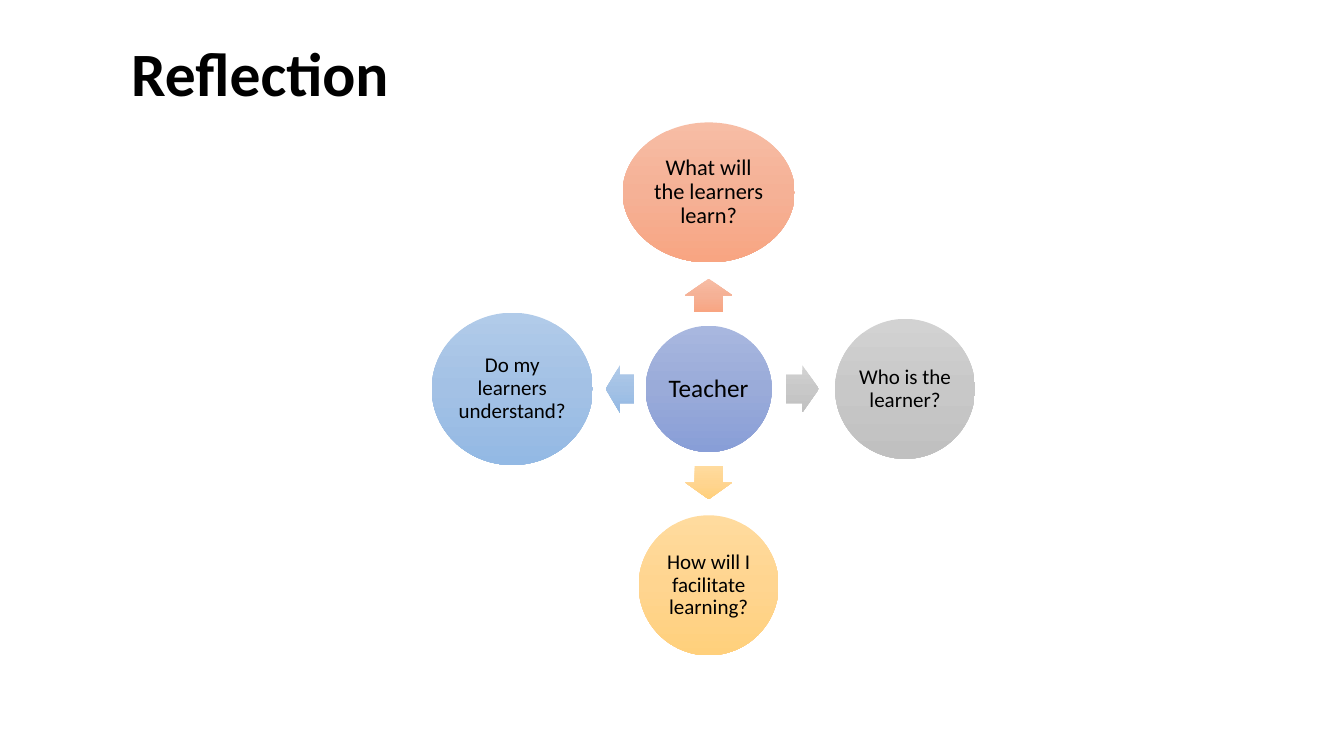
from copy import deepcopy
from math import cos, radians, sin

from pptx import Presentation
from pptx.dml.color import RGBColor
from pptx.enum.shapes import MSO_SHAPE as SHAPE
from pptx.enum.text import MSO_ANCHOR as ANCHOR, MSO_AUTO_SIZE as AUTOSIZE, PP_ALIGN as ALIGN
from pptx.oxml.ns import qn
from pptx.util import Cm, Pt

BLACK = RGBColor(0x00, 0x00, 0x00)
WHITE = RGBColor(0xFF, 0xFF, 0xFF)
INDIGO = RGBColor(0xA8, 0xB7, 0xDF), RGBColor(0x9A, 0xAB, 0xD9), RGBColor(0x88, 0x9E, 0xD7)
ORANGE = RGBColor(0xF7, 0xBD, 0xA5), RGBColor(0xF5, 0xB1, 0x96), RGBColor(0xF8, 0xA5, 0x82)
GREY = RGBColor(0xD2, 0xD2, 0xD2), RGBColor(0xC8, 0xC8, 0xC8), RGBColor(0xC0, 0xC0, 0xC0)
GOLD = RGBColor(0xFF, 0xDB, 0x9E), RGBColor(0xFF, 0xD5, 0x90), RGBColor(0xFF, 0xD0, 0x7C)
BLUE = RGBColor(0xB1, 0xCB, 0xE9), RGBColor(0xA3, 0xC1, 0xE5), RGBColor(0x93, 0xB9, 0xE4)

HUB_X, HUB_Y = 17.86, 9.8
CIRCLE_REACH = 4.95
ARROW_HEIGHT = 1.19

QUESTIONS = [
    ("What will the learners learn?", 270, 4.34, 3.53, 16, ORANGE, 0.84, 2.36),
    ("Who is the learner?", 0, 3.53, 3.53, 15, GREY, 0.84, 2.36),
    ("How will I facilitate learning?", 90, 3.53, 3.53, 15, GOLD, 0.84, 2.36),
    ("Do my learners understand?", 180, 4.06, 3.84, 15, BLUE, 0.71, 2.24),
]


class Deck:
    font = "Calibri"

    def __init__(self):
        self.prs = Presentation()
        self.prs.slide_width, self.prs.slide_height = Cm(33.87), Cm(19.05)
        self.slide = self.prs.slides.add_slide(self.prs.slide_layouts[5])
        background = self.slide.background.fill
        background.solid()
        background.fore_color.rgb = WHITE

    def add_text(self, tf, text, size, align, bold=False):
        tf.word_wrap = True
        tf.auto_size = AUTOSIZE.NONE
        tf.vertical_anchor = ANCHOR.MIDDLE
        p = tf.paragraphs[0]
        p.alignment = align
        p.line_spacing = 0.9
        r = p.add_run()
        r.text = text
        r.font.name, r.font.size, r.font.bold = self.font, Pt(size), bold
        r.font.color.rgb = BLACK

    def title(self, text):
        sp = self.slide.shapes.title
        sp.left, sp.top, sp.width, sp.height = Cm(3.05), Cm(0.79), Cm(27.94), Cm(2.29)
        self.add_text(sp.text_frame, text, 44, ALIGN.LEFT, True)

    def shape(self, kind, x, y, width, height, shades):
        sp = self.slide.shapes.add_shape(
            kind, Cm(x - width / 2), Cm(y - height / 2), Cm(width), Cm(height))
        sp.shadow.inherit = False
        sp.line.fill.background()
        sp.fill.gradient()
        sp.fill.gradient_angle = 270
        grad = sp._element.spPr.find(qn("a:gradFill"))
        grad.set("rotWithShape", "0")
        stops = grad.find(qn("a:gsLst"))
        stops.insert(1, deepcopy(stops[0]))
        for stop, position, shade in zip(sp.fill.gradient_stops, (0, 0.5, 1), shades):
            stop.position = position
            stop.color.rgb = shade
        return sp

    def circle(self, text, x, y, width, height, size, shades, inset=0.05):
        sp = self.shape(SHAPE.OVAL, x, y, width, height, shades)
        tf = sp.text_frame
        tf.margin_left = tf.margin_right = tf.margin_top = tf.margin_bottom = Cm(inset)
        self.add_text(tf, text, size, ALIGN.CENTER)

    def arrow(self, x, y, length, angle, shades):
        sp = self.shape(SHAPE.RIGHT_ARROW, x, y, length, ARROW_HEIGHT, shades)
        sp.adjustments[0], sp.adjustments[1] = 0.6, 0.5
        sp.rotation = angle


def around_hub(angle, reach):
    return HUB_X + reach * cos(radians(angle)), HUB_Y + reach * sin(radians(angle))


def main():
    deck = Deck()
    deck.title("Reflection")
    deck.circle("Teacher", HUB_X, HUB_Y, 3.18, 3.18, 18, INDIGO, 0.08)
    for text, angle, width, height, size, shades, length, arrow_reach in QUESTIONS:
        deck.arrow(*around_hub(angle, arrow_reach), length, angle, shades)
        deck.circle(text, *around_hub(angle, CIRCLE_REACH), width, height, size, shades)
    deck.prs.save("out.pptx")


if __name__ == "__main__":
    main()
